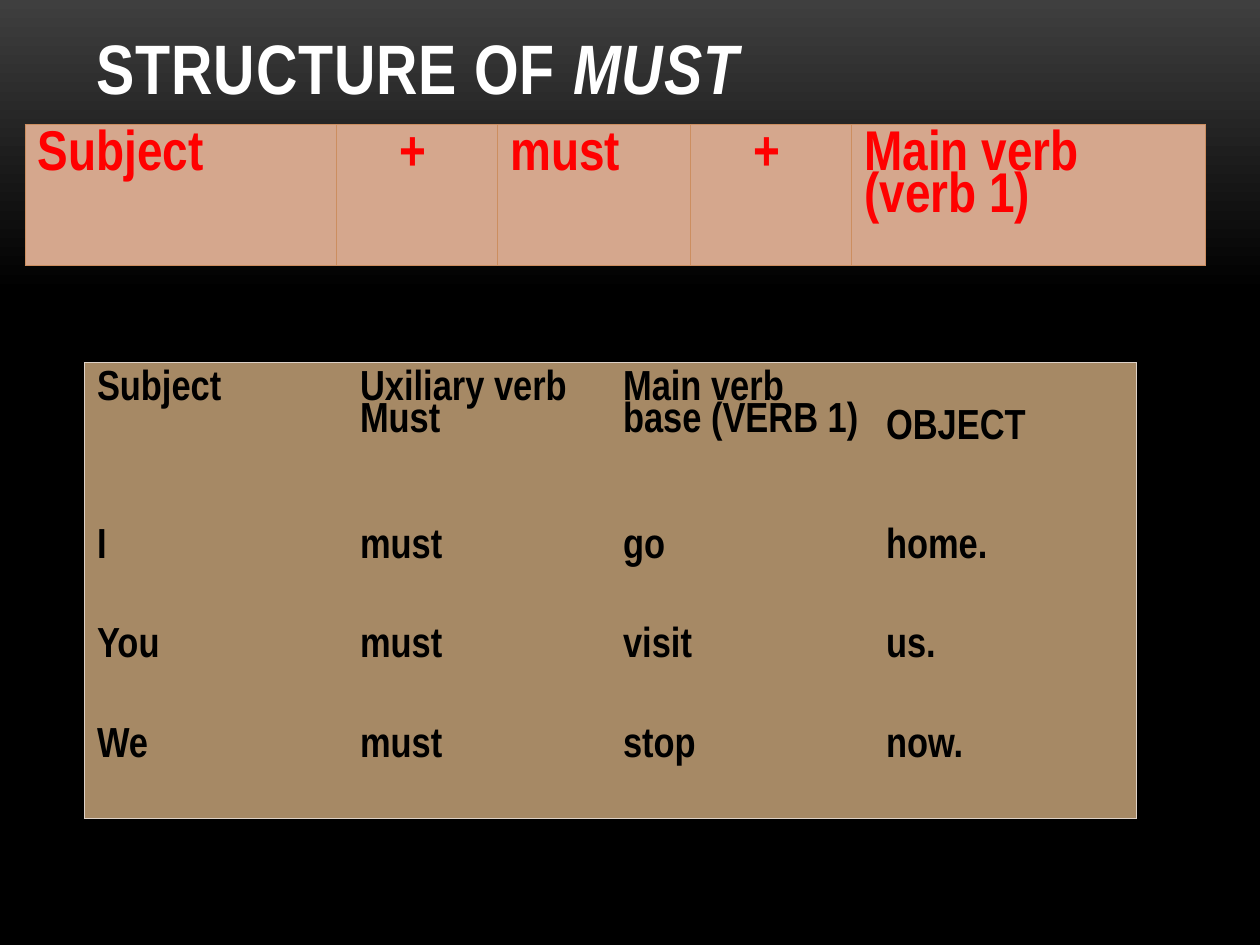
from copy import deepcopy

from lxml.etree import SubElement
from pptx import Presentation
from pptx.dml.color import RGBColor
from pptx.enum.text import MSO_ANCHOR
from pptx.oxml.ns import qn
from pptx.util import Inches, Pt

FONT = "Arial Narrow"
PLUS = "+"
FORMULA = ["Subject", PLUS, "must", PLUS, "Main verb\n(verb 1)"]
EXAMPLES = [
    ["Subject", "Uxiliary verb\vMust", "Main verb\vbase (VERB 1)", "OBJECT"],
    ["I", "must", "go", "home."],
    ["You", "must", "visit", "us."],
    ["We", "must", "stop", "now."],
]


def color(code):
    return RGBColor.from_string(code)


def add_run(para, text, size, ink, italic=False):
    run = para.add_run()
    run.text = text
    font = run.font
    font.name, font.size, font.bold, font.italic = FONT, Pt(size), True, italic
    font.color.rgb = color(ink)
    return run


def paint(slide):
    """Fade the background from grey to black."""
    fill = slide.background.fill
    fill.gradient()
    fill.gradient_angle = 270
    stops = fill.gradient_stops
    for stop, place, code in zip(stops, (0, 0.31), ("3F3F3F", "000000")):
        stop.position = place
        stop.color.rgb = color(code)
    last = fill._fill._gradFill.gsLst[-1]
    end = deepcopy(last)
    end.set("pos", "100000")
    last.addnext(end)


def add_title(slide, box):
    frame = slide.shapes.add_textbox(*map(Inches, box)).text_frame
    frame.word_wrap = True
    frame.vertical_anchor = MSO_ANCHOR.MIDDLE
    para = frame.paragraphs[0]
    for text, italic in (("STRUCTURE OF\u00a0".replace("\u00a0", " "), False), ("MUST", True)):
        run = add_run(para, text, 40, "FFFFFF", italic)
        run.font._element.set("spc", "50")


def set_edges(cell, edges):
    """Draw the four cell borders; None hides one."""
    props = cell._tc.get_or_add_tcPr()
    for spot, (side, code) in enumerate(edges.items()):
        line = SubElement(props, qn(f"a:ln{side}"), w=str(Pt(0.75)))
        if code:
            solid = SubElement(line, qn("a:solidFill"))
            SubElement(solid, qn("a:srgbClr"), val=code)
        else:
            SubElement(line, qn("a:noFill"))
        props.insert(spot, line)


def fill_cell(cell, text, size, ink, back):
    cell.fill.solid()
    cell.fill.fore_color.rgb = color(back)
    cell.margin_left = cell.margin_right = Inches(0.1)
    cell.margin_top = cell.margin_bottom = Inches(0.1)
    frame = cell.text_frame
    for num, part in enumerate(text.split("\n")):
        para = frame.add_paragraph() if num else frame.paragraphs[0]
        para.line_spacing = 0.8
        for spot, line in enumerate(part.split("\v")):
            if spot:
                para.add_line_break()
            add_run(para, line, size, ink)


def add_grid(slide, box, rows, widths, heights, size, ink, back, rim, inner):
    """Place a table; widths and heights are shares of the box."""
    left, top, width, height = box
    table = slide.shapes.add_table(len(rows), len(widths), *map(Inches, box)).table
    for col, share in zip(table.columns, widths):
        col.width = Inches(width * share / sum(widths))
    for row, share in zip(table.rows, heights):
        row.height = Inches(height * share / sum(heights))
    for r, row in enumerate(rows):
        for c, text in enumerate(row):
            cell = table.cell(r, c)
            fill_cell(cell, text, size, ink, back)
            set_edges(cell, {
                "L": inner if c else rim,
                "R": inner if c < len(widths) - 1 else rim,
                "T": inner if r else rim,
                "B": inner if r < len(rows) - 1 else rim,
            })
    return table


def add_formula(slide, box):
    table = add_grid(slide, box, [FORMULA], (2.47, 1.28, 1.53, 1.28, 2.81), (1,),
                     32, "FF0000", "D5A78D", "CC8E60", "CC8E60")
    for cell in table.iter_cells():
        if cell.text == PLUS:
            cell.margin_left = Inches(0.5)


def add_examples(slide, box):
    table = add_grid(slide, box, EXAMPLES, (1,) * 4, (1.25, 0.79, 0.79, 0.79),
                     24, "000000", "A68965", "DED2C8", None)
    # The last heading stands level with the second line of its neighbours.
    table.cell(0, 3).margin_top = Inches(0.41)


def main():
    deck = Presentation()
    deck.slide_width, deck.slide_height = Inches(10), Inches(7.5)
    slide = deck.slides.add_slide(deck.slide_layouts[6])
    paint(slide)
    add_title(slide, (0.67, 0.13, 8.67, 0.8))
    add_formula(slide, (0.2, 0.99, 9.37, 1.12))
    add_examples(slide, (0.67, 2.88, 8.35, 3.62))
    deck.save("out.pptx")


if __name__ == "__main__":
    main()
